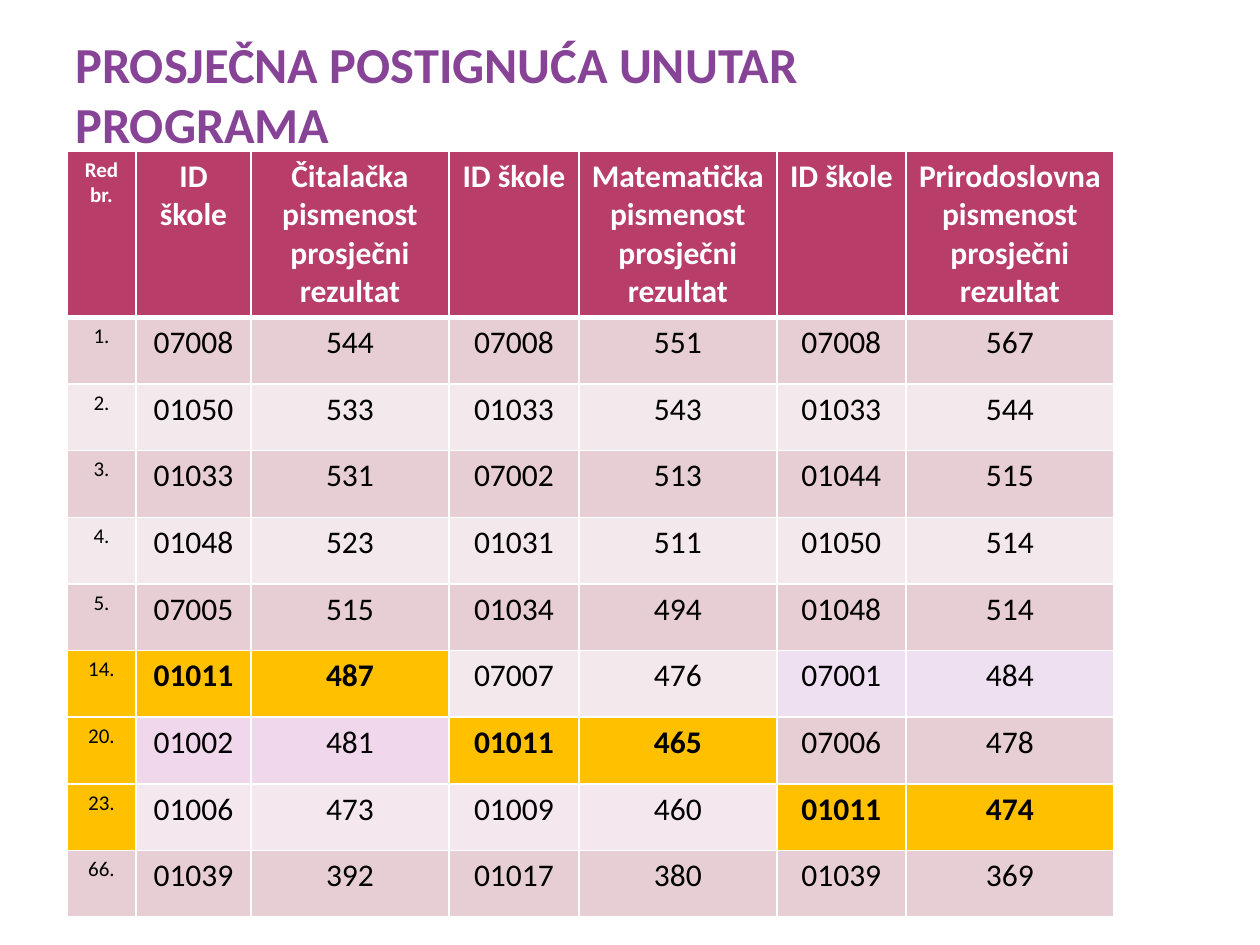
from dataclasses import dataclass

import lxml.etree
import pptx
import pptx.dml.color
import pptx.enum.text
import pptx.oxml.ns
import pptx.util

RGBColor = pptx.dml.color.RGBColor
WHITE = RGBColor(0xFF, 0xFF, 0xFF)
BLACK = RGBColor(0x00, 0x00, 0x00)
PURPLE = RGBColor(0x87, 0x43, 0x96)
PLUM = RGBColor(0x5E, 0x1A, 0x50)
RASPBERRY = RGBColor(0xB8, 0x3D, 0x68)
ROSE = RGBColor(0xE6, 0xCE, 0xD4)
PALE_ROSE = RGBColor(0xF3, 0xE8, 0xEB)
BLUSH = RGBColor(0xF4, 0xE7, 0xED)
LILAC = RGBColor(0xEE, 0xE0, 0xF1)
ORCHID = RGBColor(0xF1, 0xD7, 0xEC)
GOLD = RGBColor(0xFF, 0xC0, 0x00)

FONT = "Calibri"
PIXELS_PER_INCH = 126
HIGHLIGHTED_SCHOOL = "01011"
COLUMN_WIDTHS = (69, 115, 198, 130, 198, 129, 208)
HEADER_HEIGHT = 134
BODY_HEIGHT = 600
HEADERS = (
    "Red br.",
    "ID škole", "Čitalačka pismenost prosječni rezultat",
    "ID škole", "Matematička pismenost prosječni rezultat",
    "ID škole", "Prirodoslovna pismenost prosječni rezultat",
)


@dataclass(frozen=True)
class Ranking:
    """One rank: an ID and score for each subject, with a fill per subject."""
    rank: str
    results: str
    fills: tuple[RGBColor, RGBColor, RGBColor]


RANKINGS = (
    Ranking("1.", "07008 544 07008 551 07008 567", (ROSE,) * 3),
    Ranking("2.", "01050 533 01033 543 01033 544", (PALE_ROSE,) * 3),
    Ranking("3.", "01033 531 07002 513 01044 515", (ROSE,) * 3),
    Ranking("4.", "01048 523 01031 511 01050 514", (PALE_ROSE,) * 3),
    Ranking("5.", "07005 515 01034 494 01048 514", (ROSE,) * 3),
    Ranking("14.", "01011 487 07007 476 07001 484", (GOLD, PALE_ROSE, LILAC)),
    Ranking("20.", "01002 481 01011 465 07006 478", (ORCHID, GOLD, ROSE)),
    Ranking("23.", "01006 473 01009 460 01011 474", (BLUSH, BLUSH, GOLD)),
    Ranking("66.", "01039 392 01017 380 01039 369", (ROSE,) * 3),
)


def px(length: int) -> int:
    return round(length * pptx.util.Inches(1) / PIXELS_PER_INCH)


def add_line(parent, tag: str, width: float, color: RGBColor) -> None:
    """Append a solid line element to text or cell properties."""
    qn = pptx.oxml.ns.qn
    line = lxml.etree.SubElement(parent, qn(tag), w=str(pptx.util.Pt(width)))
    fill = lxml.etree.SubElement(line, qn("a:solidFill"))
    lxml.etree.SubElement(fill, qn("a:srgbClr"), val=str(color))


def add_run(paragraph, text: str, size: float, color: RGBColor, bold: bool):
    run = paragraph.add_run()
    run.text = text
    run.font.name = FONT
    run.font.size = pptx.util.Pt(size)
    run.font.bold = bold
    run.font.color.rgb = color
    return run


def fill_cell(cell, text: str, size: int, color: RGBColor, bold: bool,
              fill: RGBColor, top: int = 1, bottom: int = 1) -> None:
    properties = cell._tc.get_or_add_tcPr()
    for side, width in (("L", 1), ("R", 1), ("T", top), ("B", bottom)):
        add_line(properties, f"a:ln{side}", width, WHITE)
    cell.fill.solid()
    cell.fill.fore_color.rgb = fill
    paragraph = cell.text_frame.paragraphs[0]
    paragraph.alignment = pptx.enum.text.PP_ALIGN.CENTER
    add_run(paragraph, text, size, color, bold)


def format_title(title) -> None:
    title.left, title.top = px(69), px(20)
    title.width, title.height = px(998), px(134)
    frame = title.text_frame
    frame.word_wrap = True
    frame.auto_size = pptx.enum.text.MSO_AUTO_SIZE.NONE
    frame.vertical_anchor = pptx.enum.text.MSO_ANCHOR.BOTTOM
    frame.margin_left = frame.margin_right = pptx.util.Inches(0.05)
    frame.margin_top = frame.margin_bottom = 0
    paragraph = frame.paragraphs[0]
    paragraph.alignment = pptx.enum.text.PP_ALIGN.LEFT
    run = add_run(paragraph, "PROSJEČNA POSTIGNUĆA UNUTAR PROGRAMA",
                  28.8, PURPLE, True)
    # The outline has to come before the fill in the run properties
    properties = run.font._element
    add_line(properties, "a:ln", 0.04, PLUM)
    properties.insert(0, properties[-1])


def add_rankings_table(slide) -> None:
    shape = slide.shapes.add_table(
        len(RANKINGS) + 1, len(HEADERS), px(67), px(151),
        px(sum(COLUMN_WIDTHS)), px(HEADER_HEIGHT + BODY_HEIGHT))
    table = shape.table
    for column, width in zip(table.columns, COLUMN_WIDTHS):
        column.width = px(width)
    for index, row in enumerate(table.rows):
        row.height = px(BODY_HEIGHT) // len(RANKINGS) if index else px(HEADER_HEIGHT)

    # Header row
    for column, text in enumerate(HEADERS):
        fill_cell(table.cell(0, column), text, 18 if column else 12,
                  WHITE, True, RASPBERRY, bottom=3)

    # Ranked schools
    for row, ranking in enumerate(RANKINGS, start=1):
        top = 3 if row == 1 else 1
        results = ranking.results.split()
        rank_fill = GOLD if HIGHLIGHTED_SCHOOL in results else ranking.fills[0]
        fill_cell(table.cell(row, 0), ranking.rank, 12, BLACK, False,
                  rank_fill, top=top)
        for index, text in enumerate(results):
            fill = ranking.fills[index // 2]
            fill_cell(table.cell(row, index + 1), text, 18, BLACK,
                      fill == GOLD, fill, top=top)


def main() -> None:
    presentation = pptx.Presentation()
    presentation.slide_width = pptx.util.Inches(10)
    presentation.slide_height = pptx.util.Inches(7.5)
    slide = presentation.slides.add_slide(presentation.slide_layouts[5])
    format_title(slide.shapes.title)
    add_rankings_table(slide)
    presentation.save("out.pptx")


if __name__ == "__main__":
    main()
